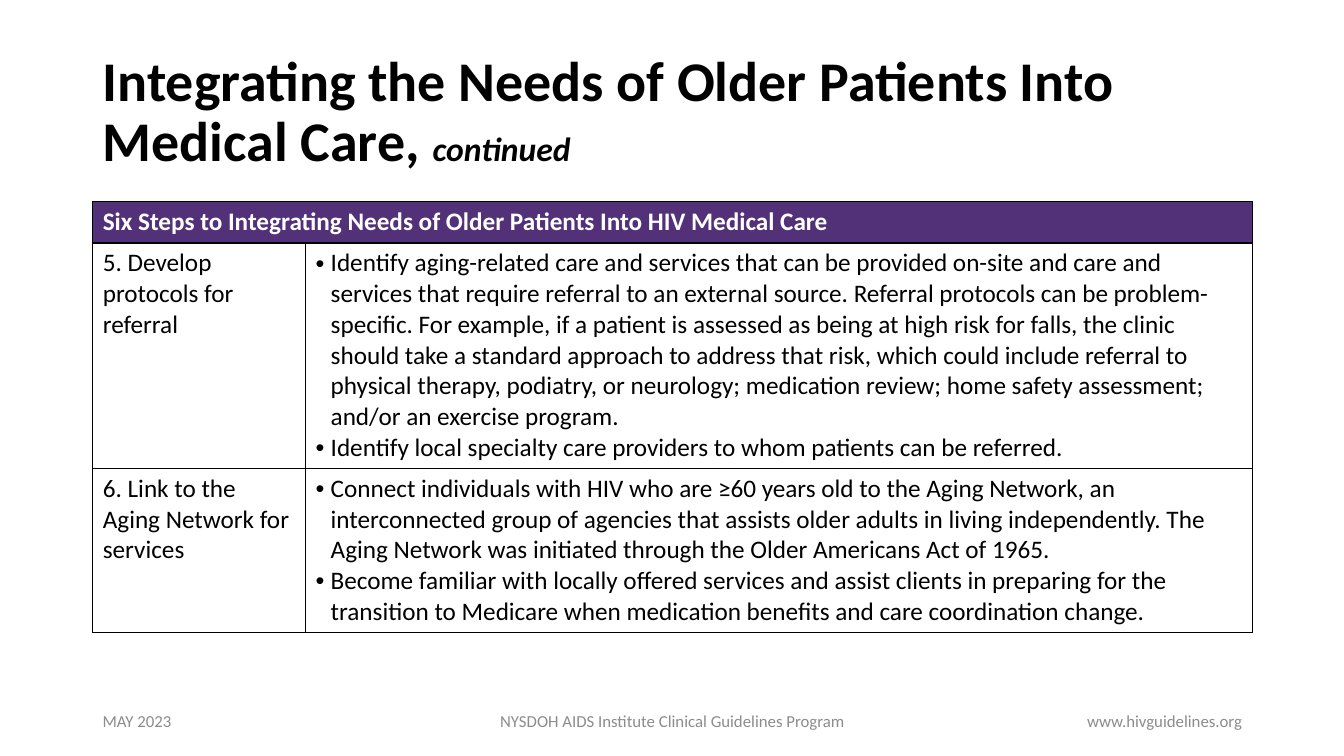
from lxml import etree
from pptx import Presentation
from pptx import util as u
from pptx.dml.color import RGBColor
from pptx.enum import text
from pptx.oxml import ns

COLORS = {"ink": "000000", "header": "523178", "paper": "FFFFFF", "footer": "8C8C8C"}

STEPS = [
    ("5. Develop protocols for referral", [
        "Identify aging-related care and services that can be provided on-site and care and "
        "services that require referral to an external source. Referral protocols can be "
        "problem-specific. For example, if a patient is assessed as being at high risk for "
        "falls, the clinic should take a standard approach to address that risk, which could "
        "include referral to physical therapy, podiatry, or neurology; medication review; home "
        "safety assessment; and/or an exercise program.",
        "Identify local specialty care providers to whom patients can be referred.",
    ]),
    ("6. Link to the Aging Network for services", [
        "Connect individuals with HIV who are ≥60 years old to the Aging Network, an "
        "interconnected group of agencies that assists older adults in living independently. "
        "The Aging Network was initiated through the Older Americans Act of 1965.",
        "Become familiar with locally offered services and assist clients in preparing for the "
        "transition to Medicare when medication benefits and care coordination change.",
    ]),
]


class SlideBuilder:
    """Holds the style and the current slide."""
    font_name = "Calibri"
    left, width = 0.92, 11.5

    def __init__(self, page):
        self.page = page

    def style(self, font, size, color="ink", bold=False):
        font.name, font.size, font.bold = self.font_name, u.Pt(size), bold
        font.color.rgb = RGBColor.from_string(COLORS[color])

    def title(self, words, suffix):
        box = self.page.shapes.title
        box.left, box.top = u.Inches(self.left), u.Inches(0.4)
        box.width, box.height = u.Inches(self.width), u.Inches(1.45)
        frame = box.text_frame
        frame.word_wrap = True
        frame.auto_size = text.MSO_AUTO_SIZE.NONE
        frame.vertical_anchor = text.MSO_ANCHOR.MIDDLE
        para = frame.paragraphs[0]
        para.alignment, para.line_spacing = text.PP_ALIGN.LEFT, 0.9
        self.style(para.font, 40, bold=True)
        para.add_run().text = words
        span = para.add_run()
        span.text = suffix
        span.font.size, span.font.italic = u.Pt(24), True

    def footer(self, words, left, width, align):
        box = self.page.shapes.add_textbox(
            u.Inches(left), u.Inches(6.95), u.Inches(width), u.Inches(0.4))
        frame = box.text_frame
        frame.word_wrap = True
        frame.vertical_anchor = text.MSO_ANCHOR.MIDDLE
        para = frame.paragraphs[0]
        para.text, para.alignment = words, align
        self.style(para.font, 12, "footer")

    def borders(self, cell):
        props = cell._tc.get_or_add_tcPr()
        for side in ("a:lnL", "a:lnR", "a:lnT", "a:lnB"):
            line = etree.SubElement(props, ns.qn(side), w=str(u.Pt(1)))
            fill = etree.SubElement(line, ns.qn("a:solidFill"))
            etree.SubElement(fill, ns.qn("a:srgbClr"), val=COLORS["ink"])

    def bullet(self, para):
        props = para._p.get_or_add_pPr()
        props.set("marL", str(u.Inches(0.15)))
        props.set("indent", str(-u.Inches(0.15)))
        etree.SubElement(props, ns.qn("a:buFont"), typeface="Arial")
        etree.SubElement(props, ns.qn("a:buChar"), char="•")

    def cell_text(self, cell, lines, color="ink", bold=False, bulleted=False):
        cell.text_frame.text = "\n".join(lines)
        for para in cell.text_frame.paragraphs:
            if bulleted:
                self.bullet(para)
            self.style(para.font, 18, color, bold)

    def steps_table(self, heading, steps, column_widths, row_heights):
        table = self.page.shapes.add_table(
            len(row_heights), len(column_widths), u.Inches(self.left), u.Inches(2),
            u.Inches(self.width), u.Inches(sum(row_heights))).table
        table.first_row = table.horz_banding = False
        for column, width in zip(table.columns, column_widths):
            column.width = u.Inches(width)
        for row, height in zip(table.rows, row_heights):
            row.height = u.Inches(height)
        for cell in table.iter_cells():
            self.borders(cell)
            cell.fill.background()

        # Header across both columns
        header = table.cell(0, 0)
        header.merge(table.cell(0, 1))
        header.fill.solid()
        header.fill.fore_color.rgb = RGBColor.from_string(COLORS["header"])
        self.cell_text(header, [heading], "paper", bold=True)

        # One row per step
        for index, (step, actions) in enumerate(steps, start=1):
            self.cell_text(table.cell(index, 0), [step])
            self.cell_text(table.cell(index, 1), actions, bulleted=True)


def main():
    deck = Presentation()
    deck.slide_width, deck.slide_height = u.Inches(13.33), u.Inches(7.5)
    slide = SlideBuilder(deck.slides.add_slide(deck.slide_layouts[5]))

    # Title
    slide.title("Integrating the Needs of Older Patients Into Medical Care, ", "continued")

    # Steps
    slide.steps_table("Six Steps to Integrating Needs of Older Patients Into HIV Medical Care",
                      STEPS, (2.11, 9.39), (0.41, 2.23, 1.62))

    # Footer
    slide.footer("MAY 2023", 0.92, 3, text.PP_ALIGN.LEFT)
    slide.footer("NYSDOH AIDS Institute Clinical Guidelines Program", 4.42, 4.5,
                 text.PP_ALIGN.CENTER)
    slide.footer("www.hivguidelines.org", 9.42, 3, text.PP_ALIGN.RIGHT)

    deck.save("out.pptx")


if __name__ == "__main__":
    main()
